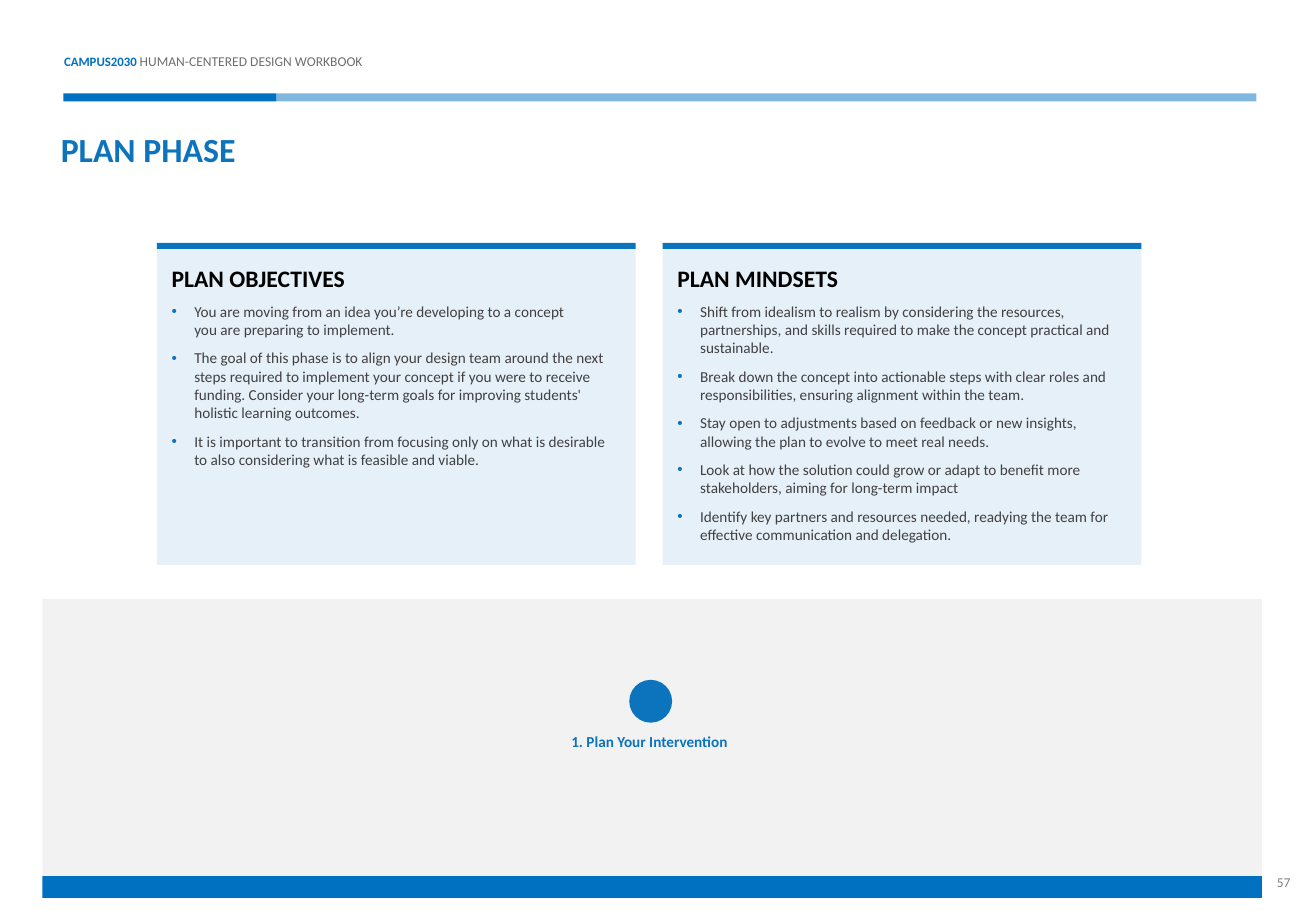
from lxml import etree
from pptx import Presentation
from pptx.dml.color import RGBColor
from pptx.enum.shapes import MSO_SHAPE
from pptx.enum.text import MSO_ANCHOR, MSO_AUTO_SIZE, PP_ALIGN
from pptx.oxml.ns import qn
from pptx.util import Pt

RECT, OVAL = MSO_SHAPE.RECTANGLE, MSO_SHAPE.OVAL
TOP, MIDDLE = MSO_ANCHOR.TOP, MSO_ANCHOR.MIDDLE
LEFT, CENTER, RIGHT = PP_ALIGN.LEFT, PP_ALIGN.CENTER, PP_ALIGN.RIGHT
NO_AUTOFIT = MSO_AUTO_SIZE.NONE

FONT = "Calibri"
COLORS = {
    "brand": "0070C0", "accent": "0C73BD", "band": "F2F2F2", "heading": "000000",
    "body": "414042", "header": "6D6E71", "page": "808080",
}

# Content
PROGRAMME = "CAMPUS2030 "
WORKBOOK = "HUMAN-CENTERED DESIGN WORKBOOK"
TITLE = "PLAN PHASE"
STEP = "1. Plan Your Intervention"
PAGE_NUMBER = "57"
PANELS = [
    ("PLAN OBJECTIVES", [
        "You are moving from an idea you’re developing to a concept\nyou are preparing to implement.",
        "The goal of this phase is to align your design team around the next steps required to "
        "implement your concept if you were to receive funding. Consider your long-term goals "
        "for improving students' holistic learning outcomes.",
        "It is important to transition from focusing only on what is desirable to also "
        "considering what is feasible and viable.",
    ]),
    ("PLAN MINDSETS", [
        "Shift from idealism to realism by considering the resources, partnerships, and skills "
        "required to make the concept practical and sustainable.",
        "Break down the concept into actionable steps with clear roles and responsibilities, "
        "ensuring alignment within the team.",
        "Stay open to adjustments based on feedback or new insights, allowing the plan to "
        "evolve to meet real needs.",
        "Look at how the solution could grow or adapt to benefit more stakeholders, aiming for "
        "long-term impact",
        "Identify key partners and resources needed, readying the team for effective "
        "communication and delegation.",
    ]),
]

# Layout, in points
SLIDE_W, SLIDE_H = 779.8, 540
RULE_LEFT, RULE_SPLIT, RULE_RIGHT, RULE_TOP, RULE_H = 37.5, 163.6, 744.5, 55.3, 4.8
PANEL_LEFT, PANEL_TOP, PANEL_W, PANEL_H, PANEL_PITCH = 93, 147.6, 283.7, 187.2, 299.7
STRIP_H, PANEL_INSET, BULLET_INDENT, PARAGRAPH_GAP = 3.6, 8.64, 13.5, 6
BAND_LEFT, BAND_TOP, BAND_W, FOOTER_TOP, FOOTER_H = 25.2, 355, 722.6, 519.3, 13
CIRCLE_X, CIRCLE_TOP, CIRCLE_D = 385.6, 403, 25.4


def place(shape, left, top, width, height):
    shape.left, shape.top, shape.width, shape.height = map(Pt, (left, top, width, height))


def fill_with(shape, color, opacity=100):
    shape.fill.solid()
    shape.fill.fore_color.rgb = RGBColor.from_string(COLORS[color])
    if opacity < 100:
        srgb = shape.fill._xPr.find(".//" + qn("a:srgbClr"))
        etree.SubElement(srgb, qn("a:alpha"), val=str(opacity * 1000))


def add_block(slide, kind, box, color, opacity=100):
    block = slide.shapes.add_shape(kind, *map(Pt, box))
    block.shadow.inherit = False
    block.line.fill.background()
    fill_with(block, color, opacity)


def set_frame(frame, insets=(0, 0, 0, 0), anchor=TOP):
    """Insets run left, top, right, bottom."""
    frame.auto_size = NO_AUTOFIT
    frame.word_wrap = True
    frame.vertical_anchor = anchor
    (frame.margin_left, frame.margin_top,
     frame.margin_right, frame.margin_bottom) = map(Pt, insets)


def write(paragraph, text, size, color, bold=False, align=LEFT):
    paragraph.alignment = align
    for number, line in enumerate(text.split("\n")):
        if number:
            paragraph.add_line_break()
        run = paragraph.add_run()
        run.text = line
        font = run.font
        font.name, font.size, font.bold = FONT, Pt(size), bold
        font.color.rgb = RGBColor.from_string(COLORS[color])


def set_bullet(paragraph, bulleted):
    properties = paragraph._p.get_or_add_pPr()
    indent = Pt(BULLET_INDENT) if bulleted else 0
    properties.set("marL", str(indent))
    properties.set("indent", str(-indent))
    if not bulleted:
        etree.SubElement(properties, qn("a:buNone"))
        return
    bullet_color = etree.SubElement(properties, qn("a:buClr"))
    etree.SubElement(bullet_color, qn("a:srgbClr"), val=COLORS["accent"])
    etree.SubElement(properties, qn("a:buFont"), typeface="Arial")
    etree.SubElement(properties, qn("a:buChar"), char="•")


def add_label(slide, box, insets=(7.2, 3.6, 7.2, 3.6), anchor=TOP):
    label = slide.shapes.add_textbox(*map(Pt, box))
    set_frame(label.text_frame, insets, anchor)
    return label.text_frame.paragraphs[0]


def fill_panel(panel, left, heading, points):
    place(panel, left, PANEL_TOP, PANEL_W, PANEL_H)
    fill_with(panel, "accent", 10)
    frame = panel.text_frame
    set_frame(frame, (PANEL_INSET,) * 4)
    for number, text in enumerate([heading, *points]):
        paragraph = frame.add_paragraph() if number else frame.paragraphs[0]
        set_bullet(paragraph, bulleted=number > 0)
        paragraph.space_before, paragraph.space_after = Pt(0), Pt(PARAGRAPH_GAP)
        if number:
            write(paragraph, text, 9, "body")
        else:
            write(paragraph, text, 14, "heading", bold=True)


def main():
    deck = Presentation()
    deck.slide_width, deck.slide_height = Pt(SLIDE_W), Pt(SLIDE_H)
    slide = deck.slides.add_slide(deck.slide_layouts.get_by_name("Two Content"))
    title, *panels = slide.placeholders

    header = add_label(slide, (38, 30.2, 300, 11), (0, 1.4, 0, 0))
    write(header, PROGRAMME, 7.6, "brand", bold=True)
    write(header, WORKBOOK, 8, "header")
    for start, end, opacity in ((RULE_LEFT, RULE_SPLIT, 100), (RULE_SPLIT, RULE_RIGHT, 50)):
        add_block(slide, RECT, (start, RULE_TOP, end - start, RULE_H), "brand", opacity)

    place(title, 36, 76.3, 478, 24.5)
    set_frame(title.text_frame)
    write(title.text_frame.paragraphs[0], TITLE, 20, "accent", bold=True)

    for column, (panel, (heading, points)) in enumerate(zip(panels, PANELS)):
        left = PANEL_LEFT + column * PANEL_PITCH
        fill_panel(panel, left, heading, points)
        add_block(slide, RECT, (left, PANEL_TOP - STRIP_H, PANEL_W, STRIP_H), "accent")

    add_block(slide, RECT, (BAND_LEFT, BAND_TOP, BAND_W, FOOTER_TOP - BAND_TOP), "band")
    add_block(slide, RECT, (BAND_LEFT, FOOTER_TOP, BAND_W, FOOTER_H), "brand")
    add_block(slide, OVAL, (CIRCLE_X - CIRCLE_D / 2, CIRCLE_TOP, CIRCLE_D, CIRCLE_D), "accent")
    step = add_label(slide, (329, 430.6, 111.6, 18))
    write(step, STEP, 9, "accent", bold=True, align=CENTER)
    page = add_label(slide, (742.3, 514, 29.5, 18), anchor=MIDDLE)
    write(page, PAGE_NUMBER, 8, "page", align=RIGHT)

    deck.save("out.pptx")


if __name__ == "__main__":
    main()
